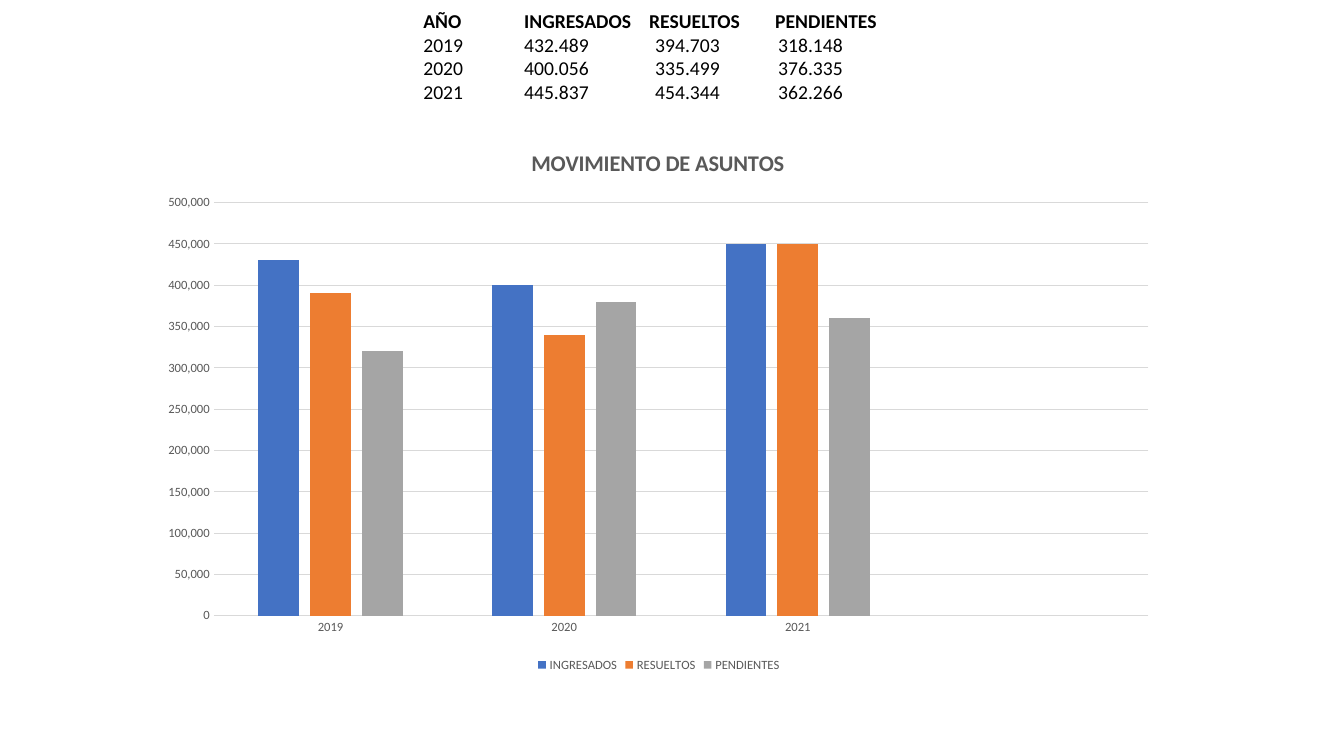
from lxml import etree
from pptx import Presentation
from pptx.chart.data import CategoryChartData
from pptx.dml.color import RGBColor
from pptx.enum.chart import XL_CHART_TYPE, XL_LEGEND_POSITION, XL_TICK_MARK
from pptx.enum.text import MSO_ANCHOR
from pptx.oxml.ns import qn
from pptx.util import Inches, Pt

COLUMN_CLUSTERED = XL_CHART_TYPE.COLUMN_CLUSTERED
LEGEND_BOTTOM = XL_LEGEND_POSITION.BOTTOM
NO_TICK = XL_TICK_MARK.NONE
ANCHOR_TOP = MSO_ANCHOR.TOP

FONT = "Calibri"
COLORS = {
    "text": "000000",
    "label": "595959",
    "grid": "D9D9D9",
    "INGRESADOS": "4472C4",
    "RESUELTOS": "ED7D31",
    "PENDIENTES": "A5A5A5",
}
YEARS = ["2019", "2020", "2021"]
CASES = {
    "INGRESADOS": [432489, 400056, 445837],
    "RESUELTOS": [394703, 335499, 454344],
    "PENDIENTES": [318148, 376335, 362266],
}
HEADER_STOPS = (1, 2.24, 3.49)
VALUE_STOPS = (1, 2.3, 3.52)


def color(name):
    return RGBColor.from_string(COLORS[name])


def style_font(font, size, color_name, bold=False):
    font.name = FONT
    font.size = Pt(size)
    font.bold = bold
    font.color.rgb = color(color_name)


def set_tab_stops(paragraph, stops):
    properties = paragraph._p.get_or_add_pPr()
    tab_list = etree.SubElement(properties, qn("a:tabLst"))
    for stop in stops:
        etree.SubElement(tab_list, qn("a:tab"), pos=str(Inches(stop)), algn="l")


def set_layout(parent, index, **values):
    for layout in parent.findall(qn("c:layout")):
        parent.remove(layout)
    layout = etree.Element(qn("c:layout"))
    manual = etree.SubElement(layout, qn("c:manualLayout"))
    if "w" in values:
        etree.SubElement(manual, qn("c:layoutTarget"), val="inner")
    for axis in "xy":
        etree.SubElement(manual, qn(f"c:{axis}Mode"), val="edge")
    for key, value in values.items():
        etree.SubElement(manual, qn(f"c:{key}"), val=str(value))
    parent.insert(index, layout)


def add_figures(slide, left, top, width, height):
    shape = slide.shapes.add_textbox(Inches(left), Inches(top), Inches(width), Inches(height))
    frame = shape.text_frame
    frame.word_wrap = True
    frame.vertical_anchor = ANCHOR_TOP
    rows = [["AÑO", *CASES]]
    for year, counts in zip(YEARS, zip(*CASES.values())):
        rows.append([year, *(f"{count:,}".replace(",", ".") for count in counts)])
    for index, row in enumerate(rows):
        is_header = index == 0
        paragraph = frame.paragraphs[0] if is_header else frame.add_paragraph()
        set_tab_stops(paragraph, HEADER_STOPS if is_header else VALUE_STOPS)
        run = paragraph.add_run()
        run.text = "\t".join(row)
        style_font(run.font, 14, "text", is_header)


def style_axes(chart):
    for axis in (chart.category_axis, chart.value_axis):
        axis.major_tick_mark = NO_TICK
        axis.minor_tick_mark = NO_TICK
        style_font(axis.tick_labels.font, 9, "label")
    value_axis = chart.value_axis
    value_axis.minimum_scale = 0
    value_axis.maximum_scale = 500000
    value_axis.major_unit = 50000
    value_axis.tick_labels.number_format = "#,##0"
    value_axis.tick_labels.number_format_is_linked = False
    value_axis.format.line.fill.background()
    value_axis.has_major_gridlines = True
    for line in (chart.category_axis.format.line, value_axis.major_gridlines.format.line):
        line.color.rgb = color("grid")
        line.width = Pt(0.75)


def add_case_chart(slide, left, top, width, height):
    data = CategoryChartData()
    data.categories = [*YEARS, ""]
    for name, counts in CASES.items():
        data.add_series(name, [*(round(count, -4) for count in counts), None])
    chart = slide.shapes.add_chart(
        COLUMN_CLUSTERED, Inches(left), Inches(top), Inches(width), Inches(height), data
    ).chart
    style_font(chart.font, 10, "text")

    chart.has_title = True
    title = chart.chart_title
    run = title.text_frame.paragraphs[0].add_run()
    run.text = "MOVIMIENTO DE ASUNTOS"
    style_font(run.font, 16, "label", True)
    title.include_in_layout = False
    set_layout(title._element, 1, x=3.76 / width, y=0.17 / height)

    plot = chart.plots[0]
    plot.gap_width = 219
    plot.overlap = -27
    plot.vary_by_categories = False
    for series in plot.series:
        series.format.fill.solid()
        series.format.fill.fore_color.rgb = color(series.name)
        series.invert_if_negative = False
    style_axes(chart)
    plot_area = chart._chartSpace.chart.plotArea
    set_layout(
        plot_area, 0, x=0.65 / width, y=0.75 / height, w=9.27 / width, h=4.1 / height
    )

    chart.has_legend = True
    chart.legend.position = LEGEND_BOTTOM
    chart.legend.include_in_layout = False
    style_font(chart.legend.font, 9, "label")


def main():
    presentation = Presentation()
    presentation.slide_width = Inches(13.33)
    presentation.slide_height = Inches(7.5)
    slide = presentation.slides.add_slide(presentation.slide_layouts[6])
    add_figures(slide, 4.1, 0.04, 8.52, 1.23)
    add_case_chart(slide, 1.47, 1.26, 10.13, 5.45)
    presentation.save("out.pptx")


if __name__ == "__main__":
    main()
